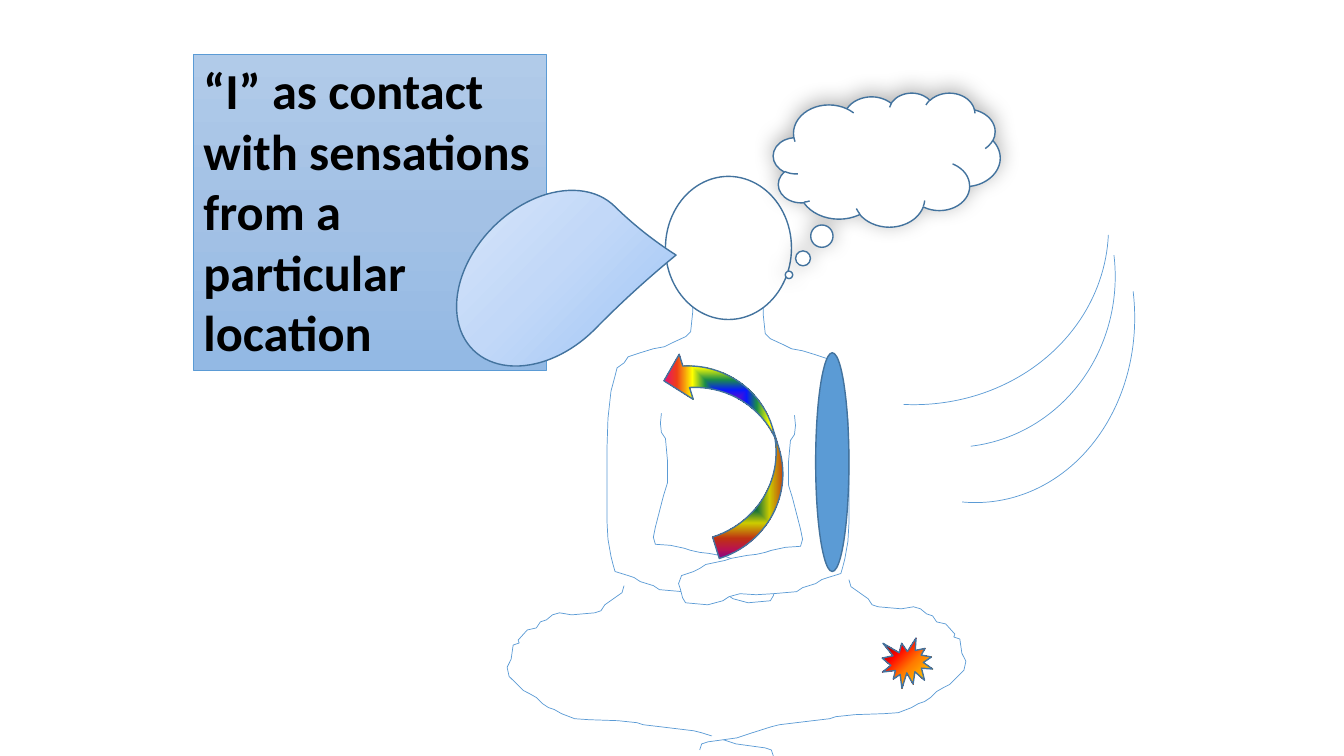
"""Build a slide of a meditating figure with sensations and a caption."""
from lxml import etree
from pptx import Presentation
from pptx import util as u
from pptx.dml.color import RGBColor
from pptx.enum import shapes, text
from pptx.oxml.ns import qn

C = {"white": "FFFFFF", "blue": "5B9BD5", "edge": "43739E", "black": "000000"}
RAINBOW = [(0, "A603AB"), (21, "0819FB"), (35, "1A8D48"), (52, "FFFF00"),
           (73, "EE3F17"), (88, "E81766"), (100, "A603AB")]
FIRE = [(0, "FFF200"), (45, "FF7A00"), (70, "FF0300"), (100, "4D0808")]
PANEL = [(0, "B1CBE9"), (50, "A3C1E5"), (100, "93B9E4")]
DROP = [(0, "9AC3F5"), (50, "C2D8F8"), (100, "E1EBFB")]
LEG = [(6.19, 5.81), (6.17, 5.88), (6, 6), (5.96, 6.06), (5.9, 6.08),
       (5.67, 6.1), (5.55, 6.08), (5.48, 6.1), (5.42, 6.15), (5.36, 6.17),
       (5.32, 6.23), (5.23, 6.25), (5.14, 6.35), (5.15, 6.38), (5.09, 6.4),
       (5.07, 6.54), (5.03, 6.62), (5.05, 6.71), (5.13, 6.79), (5.19, 6.85),
       (5.25, 6.88), (5.32, 6.92), (5.38, 6.98), (5.44, 7.02), (5.5, 7.04),
       (5.57, 7.08), (5.7, 7.13), (5.84, 7.14), (6.13, 7.15), (6.32, 7.17),
       (6.38, 7.19), (6.55, 7.21), (6.88, 7.25), (6.96, 7.27), (7.15, 7.33),
       (7.3, 7.38), (7.59, 7.42), (7.65, 7.44), (7.67, 7.5)]
TORSO = [(6.87, 2.9), (6.87, 3.1), (6.85, 3.29), (6.8, 3.34), (6.67, 3.4),
         (6.59, 3.44), (6.48, 3.46), (6.35, 3.5), (6.23, 3.54), (6.19, 3.6),
         (6.12, 3.65), (6.1, 3.73), (6.06, 3.88), (6.03, 4.15), (6.02, 4.45),
         (6.02, 4.81), (6.02, 5.17), (6.03, 5.35), (6.06, 5.52), (6.08, 5.6),
         (6.1, 5.67), (6.23, 5.71), (6.29, 5.73), (6.35, 5.77), (6.48, 5.81),
         (6.54, 5.85), (6.77, 5.87), (6.94, 5.88), (7.1, 5.87), (7.21, 5.9),
         (7.27, 5.94), (7.42, 5.98), (7.64, 5.96), (7.67, 5.91), (7.69, 5.83),
         (7.71, 5.77), (7.68, 5.69), (7.56, 5.65), (7.5, 5.62), (7.44, 5.58),
         (7.25, 5.54), (7.19, 5.52), (7.03, 5.49), (6.94, 5.48), (6.85, 5.46),
         (6.79, 5.44), (6.65, 5.41), (6.5, 5.4), (6.48, 5.33), (6.5, 5.23),
         (6.58, 4.92), (6.62, 4.79), (6.62, 4.57), (6.6, 4.35), (6.56, 4.29),
         (6.55, 4.2), (6.56, 4.1)]


def outline(sp, color, width):
    """Set the line of a shape and switch off its shadow."""
    sp.line.color.rgb = RGBColor.from_string(C[color])
    sp.line.width = u.Pt(width)
    sp.shadow.inherit = False


def solid(sp, color):
    """Fill a shape with one colour."""
    sp.fill.solid()
    sp.fill.fore_color.rgb = RGBColor.from_string(C[color])


def gradient(sp, stops, angle=0, path=None, focus=(50, 50, 50, 50)):
    """Fill a shape with a linear gradient, or a path gradient around a focus."""
    sp.fill.gradient()
    grad = sp._element.spPr.find(qn("a:gradFill"))
    grad.clear()
    grad.set("rotWithShape", "1")
    gs_list = etree.SubElement(grad, qn("a:gsLst"))
    for pos, color in stops:
        gs = etree.SubElement(gs_list, qn("a:gs"), pos=str(pos * 1000))
        etree.SubElement(gs, qn("a:srgbClr"), val=color)
    if path:
        node = etree.SubElement(grad, qn("a:path"), path=path)
        sides = {k: str(v * 1000) for k, v in zip("ltrb", focus)}
        etree.SubElement(node, qn("a:fillToRect"), **sides)
    else:
        etree.SubElement(grad, qn("a:lin"), ang=str(angle * 60000), scaled="0")


def soft_shadow(sp):
    """Give a shape a wide pale shadow."""
    effects = sp._element.spPr.find(qn("a:effectLst"))
    shadow = etree.SubElement(effects, qn("a:outerShdw"), blurRad="190500",
                              dist="38100", dir="16200000", rotWithShape="0")
    color = etree.SubElement(shadow, qn("a:srgbClr"), val=C["black"])
    etree.SubElement(color, qn("a:alpha"), val="30000")


def preset(parent, kind, box, rotation=0, adj=(), edge="edge", width=1):
    """Add an outlined preset shape."""
    sp = parent.shapes.add_shape(kind, *map(u.Inches, box))
    sp.rotation = rotation
    for i, value in enumerate(adj):
        sp.adjustments[i] = value
    outline(sp, edge, width)
    return sp


def contour(parent, points):
    """Add a white open outline through the points."""
    (x, y), *rest = [(u.Inches(a), u.Inches(b)) for a, b in points]
    builder = parent.shapes.build_freeform(x, y)
    builder.add_line_segments(rest, close=False)
    sp = builder.convert_to_shape()
    solid(sp, "white")
    outline(sp, "blue", 0.5)


def mirrored(points, x_sum, dy):
    """Reflect points left to right and shift them down."""
    return [(x_sum - x, y + dy) for x, y in points]


def caption(parent, words, box):
    """Add the gradient panel with bold text."""
    sp = preset(parent, shapes.MSO_SHAPE.RECTANGLE, box, edge="blue", width=0.5)
    gradient(sp, PANEL, angle=90)
    tf = sp.text_frame
    tf.word_wrap = True
    tf.auto_size = text.MSO_AUTO_SIZE.SHAPE_TO_FIT_TEXT
    tf.vertical_anchor = text.MSO_ANCHOR.TOP
    p = tf.paragraphs[0]
    p.text = words
    p.alignment = text.PP_ALIGN.LEFT
    p.font.name, p.font.size, p.font.bold = "Calibri", u.Pt(36), True
    p.font.color.rgb = RGBColor.from_string(C["black"])


def main():
    """Build and save the slide."""
    prs = Presentation()
    prs.slide_width, prs.slide_height = u.Inches(13.33), u.Inches(7.5)
    s = prs.slides.add_slide(prs.slide_layouts[6])
    kind = shapes.MSO_SHAPE

    body = s.shapes.add_group_shape()
    for points in (LEG, mirrored(LEG, 14.61, -0.06),
                   TORSO, mirrored(TORSO, 14.44, 0.02)):
        contour(body, points)
    solid(preset(body, kind.OVAL, (6.6, 1.75, 1.25, 1.42)), "white")

    arrow = preset(s, kind.CURVED_UP_ARROW, (6.21, 3.97, 2.08, 0.89), 252.7,
                   (0.25, 0.526, 0.25))
    gradient(arrow, RAINBOW, path="shape")
    burst = preset(s, kind.EXPLOSION1, (8.75, 6.33, 0.5, 0.5))
    gradient(burst, FIRE, path="circle", focus=(100, 100, 0, 0))
    thought = preset(s, kind.CLOUD_CALLOUT, (7.67, 0.92, 2.25, 1.33),
                     adj=(-0.431, 0.859))
    solid(thought, "white")
    soft_shadow(thought)
    caption(s, "“I” as contact with sensations from a particular location",
            (1.92, 0.54, 3.5, 3.13))

    sound = s.shapes.add_group_shape()
    for box, rotation, adj in (((7.27, 0.29, 3.55, 3.9), 92.7, ()),
                               ((7.71, 1.09, 3.43, 3.27), 83.2, ()),
                               ((7.71, 1.45, 3.81, 3.27), 83.2, (162, 5.378))):
        wave = preset(sound, kind.ARC, box, rotation, adj, "blue", 0.5)
        wave.fill.background()
    solid(preset(sound, kind.OVAL, (8.09, 3.5, 0.33, 2.17)), "blue")

    drop = preset(s, kind.TEAR, (4.68, 1.76, 1.43, 2), 44.5, (1.082,))
    gradient(drop, DROP, angle=180)
    prs.save("out.pptx")


if __name__ == "__main__":
    main()
